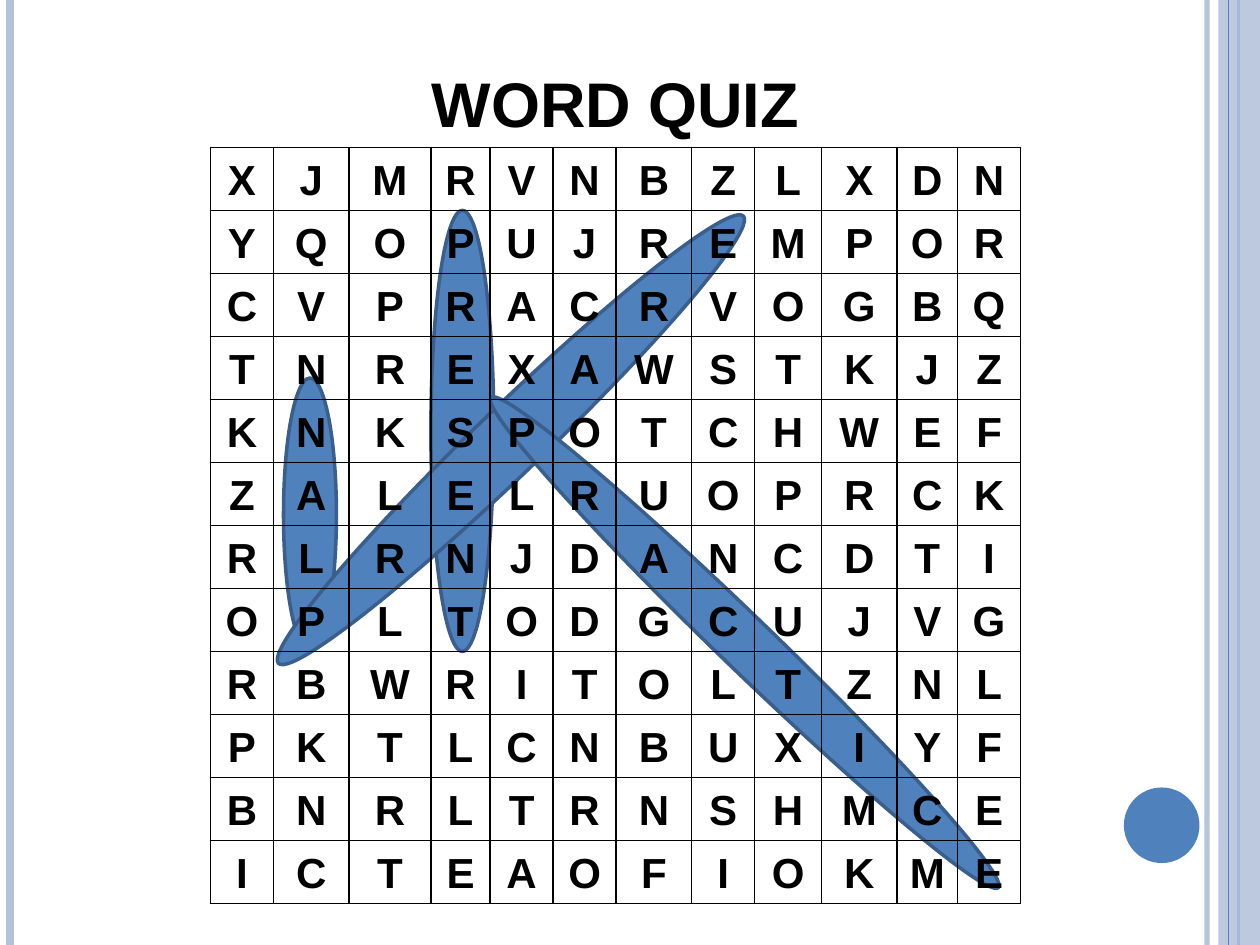
"""Build a word search slide with the found words ringed behind the letter grid."""
import pptx
import pptx.dml.color
import pptx.enum.shapes
import pptx.enum.text
import pptx.oxml
import pptx.oxml.ns
import pptx.util
from pptx.util import Inches

BLACK = pptx.dml.color.RGBColor(0x00, 0x00, 0x00)
BLUE = pptx.dml.color.RGBColor(0x4F, 0x81, 0xBD)
DARK_BLUE = pptx.dml.color.RGBColor(0x3A, 0x5F, 0x8C)
PALE_BLUE = pptx.dml.color.RGBColor(0xB3, 0xC1, 0xDB)

RECT = pptx.enum.shapes.MSO_SHAPE.RECTANGLE
OVAL = pptx.enum.shapes.MSO_SHAPE.OVAL

TITLE = "WORD QUIZ"
LETTERS = [
    "XJMRVNBZLXDN",
    "YQOPUJREMPOR",
    "CVPRACRVOGBQ",
    "TNREXAWSTKJZ",
    "KNKSPOTCHWEF",
    "ZALELRUOPRCK",
    "RLRNJDANCDTI",
    "OPLTODGCUJVG",
    "RBWRITOLTZNL",
    "PKTLCNBUXIYF",
    "BNRLTRNSHMCE",
    "ICTEAOFIOKME",
]
COLUMN_WIDTHS = [0.5, 0.6, 0.65, 0.47, 0.5, 0.5, 0.6, 0.5, 0.53, 0.6, 0.48, 0.5]
TITLE_HEIGHT = 0.7
ROW_HEIGHT = 0.5

WORD_RINGS = [
    (3.42, 1.67, 0.5, 3.5, 0),
    (2.25, 3, 0.42, 2.17, 0),
    (3.79, 0.93, 0.53, 5.12, 46.1),
    (5.7, 2.3, 0.42, 5.6, 134),
]


def set_alpha(element, percent):
    """Make the solid colour inside an element partly transparent."""
    color = element.find(".//" + pptx.oxml.ns.qn("a:srgbClr"))
    alpha = pptx.oxml.parse_xml(
        f'<a:alpha {pptx.oxml.ns.nsdecls("a")} val="{percent * 1000}"/>')
    color.append(alpha)


def add_stripe(slide, x, color, width, alpha=100):
    """Draw a vertical line over the full height of the slide."""
    line = slide.shapes.add_connector(
        pptx.enum.shapes.MSO_CONNECTOR.STRAIGHT,
        Inches(x), 0, Inches(x), Inches(7.5))
    line.line.color.rgb = color
    line.line.width = pptx.util.Pt(width)
    sp_pr = line._element.spPr
    sp_pr.append(pptx.oxml.parse_xml(
        f'<a:effectLst {pptx.oxml.ns.nsdecls("a")}/>'))
    if alpha < 100:
        set_alpha(sp_pr, alpha)


def add_filled_shape(slide, kind, left, top, width, height, color):
    """Add a flat shape without an outline."""
    sp = slide.shapes.add_shape(
        kind, Inches(left), Inches(top), Inches(width), Inches(height))
    sp.shadow.inherit = False
    sp.fill.solid()
    sp.fill.fore_color.rgb = color
    sp.line.fill.background()
    return sp


def add_word_ring(slide, left, top, width, height, rotation):
    """Add the outlined oval that marks one found word."""
    sp = add_filled_shape(slide, OVAL, left, top, width, height, BLUE)
    sp.rotation = rotation
    sp.line.color.rgb = DARK_BLUE
    sp.line.width = pptx.util.Pt(2)


def set_borders(cell, sides):
    """Give a cell thin black borders on the named sides."""
    tc_pr = cell._tc.get_or_add_tcPr()
    for side in sides:
        tc_pr.append(pptx.oxml.parse_xml(
            f'<a:ln{side} {pptx.oxml.ns.nsdecls("a")} w="12700"><a:solidFill>'
            f'<a:srgbClr val="{BLACK}"/></a:solidFill></a:ln{side}>'))


def format_cell(cell, text, size, sides):
    """Fill in one clear cell with centred bold text and borders."""
    set_borders(cell, sides)
    cell.fill.background()
    cell.vertical_anchor = pptx.enum.text.MSO_ANCHOR.BOTTOM
    cell.text = text
    p = cell.text_frame.paragraphs[0]
    p.alignment = pptx.enum.text.PP_ALIGN.CENTER
    p.font.name = "Arial"
    p.font.size = pptx.util.Pt(size)
    p.font.bold = True
    p.font.color.rgb = BLACK


def add_letter_grid(slide):
    """Add the title row and the grid of letters as a table."""
    columns = len(COLUMN_WIDTHS)
    rows = len(LETTERS)
    table = slide.shapes.add_table(
        rows + 1, columns, Inches(1.67), Inches(0.47),
        Inches(sum(COLUMN_WIDTHS)),
        Inches(TITLE_HEIGHT + rows * ROW_HEIGHT)).table
    table.first_row = False
    table.horz_banding = False
    for column, width in zip(table.columns, COLUMN_WIDTHS):
        column.width = Inches(width)
    for row in table.rows:
        row.height = Inches(ROW_HEIGHT)
    table.rows[0].height = Inches(TITLE_HEIGHT)

    for c in range(columns):
        format_cell(table.cell(0, c), "", 36, "B")
    table.cell(0, 0).merge(table.cell(0, columns - 1))
    format_cell(table.cell(0, 0), TITLE, 36, "")
    for r, word in enumerate(LETTERS, start=1):
        for c, letter in enumerate(word):
            format_cell(table.cell(r, c), letter, 24, "LRTB")


def add_side_decoration(slide):
    """Draw the stripes, the right-hand band and the round marker."""
    add_stripe(slide, 9.58, PALE_BLUE, 3, alpha=93)
    add_stripe(slide, 0.08, PALE_BLUE, 4.5)
    add_stripe(slide, 9.83, BLUE, 1.5)
    band = add_filled_shape(slide, RECT, 9.67, 0, 0.33, 7.5, PALE_BLUE)
    set_alpha(band._element.spPr, 87)
    add_stripe(slide, 9.75, BLUE, 0.75)
    add_filled_shape(slide, OVAL, 8.92, 6.25, 0.6, 0.6, BLUE)


def main():
    """Build and save the slide."""
    prs = pptx.Presentation()
    prs.slide_width = Inches(10)
    prs.slide_height = Inches(7.5)
    slide = prs.slides.add_slide(prs.slide_layouts[6])
    add_side_decoration(slide)
    for ring in WORD_RINGS:
        add_word_ring(slide, *ring)
    add_letter_grid(slide)
    prs.save("out.pptx")


if __name__ == "__main__":
    main()
